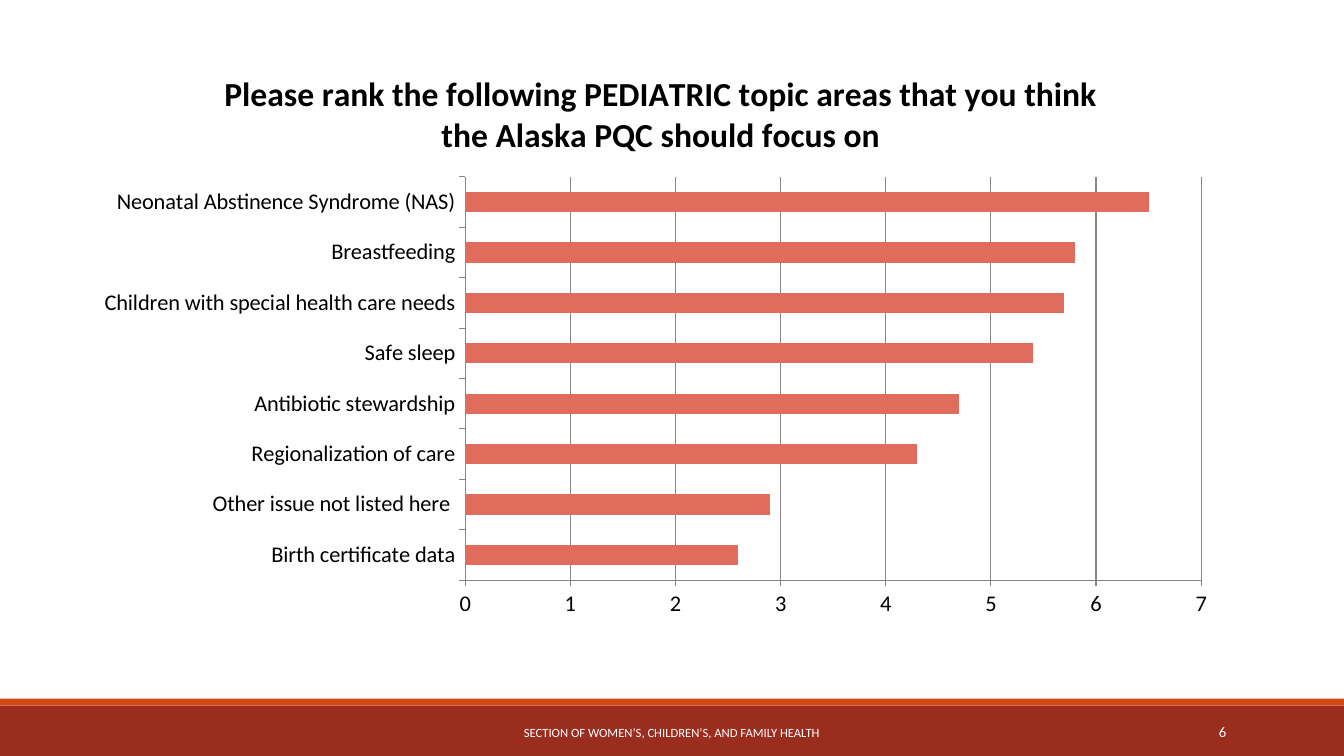
import pptx
import pptx.chart.data
import pptx.dml.color
import pptx.enum.chart
import pptx.enum.shapes
import pptx.enum.text
import pptx.oxml
import pptx.oxml.ns
import pptx.util

Pt = pptx.util.Pt
ALIGN = pptx.enum.text.PP_ALIGN
CHART = pptx.enum.chart


def colour(value):
    return pptx.dml.color.RGBColor.from_string(value)


class SlideBuilder:
    font_name = "Calibri"
    ink = "000000"
    grid = "868686"

    def __init__(self, page):
        self.page = page

    def set_values(self, target, values):
        for name, value in values.items():
            setattr(target, name, value)

    def style_font(self, font, size, hue, bold=False):
        self.set_values(font, {"name": self.font_name, "size": Pt(size), "bold": bold})
        font.color.rgb = colour(hue)

    def band(self, left, top, width, height, hue):
        box = self.page.shapes.add_shape(
            pptx.enum.shapes.MSO_SHAPE.RECTANGLE, Pt(left), Pt(top), Pt(width), Pt(height))
        box.shadow.inherit = False
        box.fill.solid()
        box.fill.fore_color.rgb = colour(hue)
        box.line.fill.background()

    def text(self, left, top, width, height, words, size, align):
        box = self.page.shapes.add_textbox(Pt(left), Pt(top), Pt(width), Pt(height))
        self.set_values(box.text_frame, {
            "word_wrap": True, "vertical_anchor": pptx.enum.text.MSO_ANCHOR.MIDDLE})
        para = box.text_frame.paragraphs[0]
        para.alignment = align
        span = para.add_run()
        span.text = words
        self.style_font(span.font, size, "FFFFFF")

    def bar_chart(self, left, top, width, height, title, scores, hue, plot):
        data = pptx.chart.data.CategoryChartData()
        data.categories = list(scores)
        data.add_series("Series 1", list(scores.values()))
        chart = self.page.shapes.add_chart(
            CHART.XL_CHART_TYPE.BAR_CLUSTERED,
            Pt(left), Pt(top), Pt(width), Pt(height), data).chart
        self.style_font(chart.font, 10, self.ink)
        self.set_values(chart, {"has_legend": False, "has_title": True})
        chart.chart_title.include_in_layout = False
        span = chart.chart_title.text_frame.paragraphs[0].add_run()
        span.text = title
        self.style_font(span.font, 24, self.ink, True)

        bars = chart.plots[0]
        self.set_values(bars, {"gap_width": 150, "vary_by_categories": False})
        bars.series[0].format.fill.solid()
        bars.series[0].format.fill.fore_color.rgb = colour(hue)

        for axis in (chart.category_axis, chart.value_axis):
            self.set_values(axis, {
                "major_tick_mark": CHART.XL_TICK_MARK.OUTSIDE,
                "minor_tick_mark": CHART.XL_TICK_MARK.NONE})
            self.style_font(axis.tick_labels.font, 16, self.ink)
            self.style_line(axis.format.line)
        chart.category_axis.has_major_gridlines = False
        self.set_values(chart.value_axis, {
            "minimum_scale": 0, "maximum_scale": 7, "major_unit": 1,
            "has_major_gridlines": True})
        self.set_values(chart.value_axis.tick_labels, {
            "number_format": "General", "number_format_is_linked": False})
        self.style_line(chart.value_axis.major_gridlines.format.line)
        self.place_plot(chart, plot)

    def style_line(self, line):
        line.width = Pt(0.75)
        line.color.rgb = colour(self.grid)

    def place_plot(self, chart, plot):
        settings = {"layoutTarget": "inner", "xMode": "edge", "yMode": "edge", **plot}
        marks = "".join(f'<c:{name} val="{value}"/>' for name, value in settings.items())
        layout = pptx.oxml.parse_xml(
            f'<c:layout {pptx.oxml.ns.nsdecls("c")}>'
            f"<c:manualLayout>{marks}</c:manualLayout></c:layout>")
        area = chart.element.find(".//" + pptx.oxml.ns.qn("c:plotArea"))
        for old in area.findall(pptx.oxml.ns.qn("c:layout")):
            area.remove(old)
        area.insert(0, layout)


def main():
    deck = pptx.Presentation()
    deck.slide_width, deck.slide_height = Pt(960), Pt(540)
    builder = SlideBuilder(deck.slides.add_slide(deck.slide_layouts[6]))

    builder.band(0, 504, 960, 36, "9B2D1F")
    builder.band(0, 499, 960, 5, "D34817")
    builder.text(780, 508.5, 103, 28.75, "6", 10.5, ALIGN.RIGHT)
    builder.text(290, 508.5, 379.5, 28.75,
                 "SECTION OF WOMEN’S, CHILDREN’S, AND FAMILY HEALTH", 9, ALIGN.CENTER)

    scores = {
        "Birth certificate data": 2.6,
        "Other issue not listed here ": 2.9,
        "Regionalization of care": 4.3,
        "Antibiotic stewardship": 4.7,
        "Safe sleep": 5.4,
        "Children with special health care needs": 5.7,
        "Breastfeeding": 5.8,
        "Neonatal Abstinence Syndrome (NAS)": 6.5,
    }
    builder.bar_chart(
        61.2, 34.5, 821.5, 417.6,
        "Please rank the following PEDIATRIC topic areas that you think "
        "the Alaska PQC should focus on",
        scores, "DF6C5D", {"x": 0.33, "y": 0.22, "w": 0.64, "h": 0.69})

    deck.save("out.pptx")


if __name__ == "__main__":
    main()
